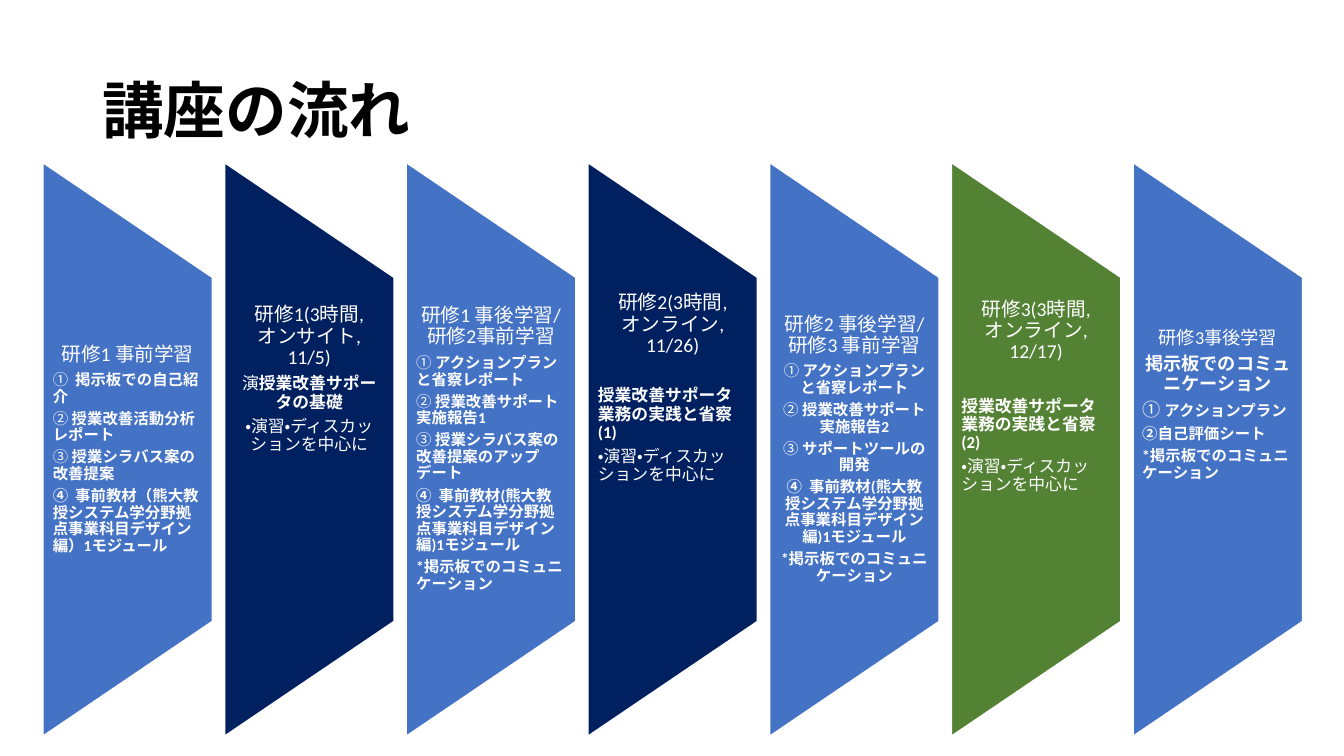
import pptx
import pptx.dml.color
import pptx.enum.lang
import pptx.enum.shapes
import pptx.enum.text
import pptx.util

Pt = pptx.util.Pt
ALIGN = pptx.enum.text.PP_ALIGN
ANCHOR = pptx.enum.text.MSO_ANCHOR
COLORS = {"blue": "4472C4", "navy": "002060", "green": "548235",
          "white": "FFFFFF", "black": "000000"}


def color(name):
    return pptx.dml.color.RGBColor.from_string(COLORS[name])


def write(frame, text, size=11, mark_size=None, align=ALIGN.LEFT, gap=None,
          font="Calibri", fill="white"):
    """Add a paragraph; text after "|" is bold, text before it is plain."""
    first = frame.paragraphs[0]
    paragraph = frame.add_paragraph() if first.runs else first
    paragraph.alignment = align
    paragraph.line_spacing = 0.9
    paragraph.space_after = Pt(round(size * 0.35, 2) if gap is None else gap)
    plain, _, bold = text.partition("|")
    for part, is_bold, part_size in ((plain, False, mark_size or size), (bold, True, size)):
        for index, line in enumerate(part.split("\n") if part else []):
            if index:
                paragraph.add_line_break()
            run = paragraph.add_run()
            run.text = line
            run.font.name = font
            run.font.size = Pt(part_size)
            run.font.bold = is_bold
            run.font.color.rgb = color(fill)
            run.font.language_id = pptx.enum.lang.MSO_LANGUAGE_ID.JAPANESE


CENTER = {"align": ALIGN.CENTER}
LEFT = {"align": ALIGN.LEFT}
BODY = {"size": 12}
CENTERED_BODY = {"size": 12, "align": ALIGN.CENTER}
HEADING = {"size": 14, "align": ALIGN.CENTER}
MATERIAL = "|④  事前教材(熊大教授システム学分野拠点事業科目デザイン編)1モジュール"
BOARD = "|*掲示板でのコミュニケーション"
PRACTICE = "・演習・ディスカッションを中心に"

# Fill, side inset, space kept free below the text, paragraphs
stages = [
    ("blue", 7.2, 0, [
        ("研修1 事前学習", HEADING),
        ("①  |掲示板での自己紹介", LEFT),
        ("② |授業改善活動分析レポート", LEFT),
        ("③ |授業シラバス案の改善提案", LEFT),
        ("|④  事前教材（熊大教授システム学分野拠点事業科目デザイン編）1モジュール", LEFT)]),
    ("navy", 7.2, 100, [
        ("研修1(3時間,\nオンサイト, 11/5)", HEADING),
        ("演|授業改善サポータの基礎", CENTERED_BODY),
        (PRACTICE, CENTERED_BODY)]),
    ("blue", 7.2, 0, [
        ("研修1 事後学習/ 研修2事前学習", HEADING),
        ("① |アクションプランと省察レポート", LEFT),
        ("② |授業改善サポート実施報告1", LEFT),
        ("③ |授業シラバス案の改善提案のアップデート", LEFT),
        (MATERIAL, LEFT),
        (BOARD, LEFT)]),
    ("navy", 7.2, 87, [
        ("研修2(3時間,\nオンライン, 11/26)", {**HEADING, "gap": 22}),
        ("|授業改善サポータ業務の実践と省察(1)", BODY),
        (PRACTICE, BODY)]),
    ("blue", 7.2, 0, [
        ("研修2 事後学習/ 研修3 事前学習", HEADING),
        ("① |アクションプランと省察レポート", CENTER),
        ("② |授業改善サポート実施報告2", CENTER),
        ("③ |サポートツールの開発", CENTER),
        (MATERIAL, CENTER),
        (BOARD, CENTER)]),
    ("green", 7.2, 75, [
        ("研修3(3時間,\nオンライン, 12/17)", {**HEADING, "gap": 25}),
        ("|授業改善サポータ業務の実践と省察(2)", BODY),
        (PRACTICE, BODY)]),
    ("blue", 6.5, 63, [
        ("研修3事後学習", {**HEADING, "size": 13}),
        ("|掲示板でのコミュニケーション", {**CENTER, "size": 13}),
        ("① |アクションプラン", {"mark_size": 13}),
        ("|②自己評価シート", LEFT),
        (BOARD, LEFT)]),
]

presentation = pptx.Presentation()
presentation.slide_width, presentation.slide_height = Pt(960), Pt(540)
slide = presentation.slides.add_slide(presentation.slide_layouts[6])

title = slide.shapes.add_textbox(Pt(66), Pt(28.75), Pt(828), Pt(104.4)).text_frame
title.word_wrap = True
title.vertical_anchor = ANCHOR.MIDDLE
write(title, "|講座の流れ", size=44, gap=0, font="Noto Sans CJK JP", fill="black")

FIRST_LEFT, PITCH, MIDDLE = 30.6, 129.8, 321
BAND_WIDTH, BAND_HEIGHT, TEXT_HEIGHT = 121, 409.6, 245.6

for number, (fill, inset, free_below, paragraphs) in enumerate(stages):
    left = FIRST_LEFT + number * PITCH
    # The band is laid out lying down, then turned upright about its centre
    band = slide.shapes.add_shape(
        pptx.enum.shapes.MSO_SHAPE.FLOWCHART_MANUAL_OPERATION,
        Pt(left + (BAND_WIDTH - BAND_HEIGHT) / 2), Pt(MIDDLE - BAND_WIDTH / 2),
        Pt(BAND_HEIGHT), Pt(BAND_WIDTH))
    band.rotation = 270
    band.shadow.inherit = False
    band.fill.solid()
    band.fill.fore_color.rgb = color(fill)
    band.line.color.rgb = color("white")
    band.line.width = Pt(1)

    content = slide.shapes.add_textbox(
        Pt(left), Pt(MIDDLE - TEXT_HEIGHT / 2), Pt(BAND_WIDTH), Pt(TEXT_HEIGHT)).text_frame
    content.word_wrap = True
    content.vertical_anchor = ANCHOR.MIDDLE
    content.margin_left = content.margin_right = Pt(inset)
    content.margin_top, content.margin_bottom = 0, Pt(free_below)
    for text, style in paragraphs:
        write(content, text, **style)

presentation.save("out.pptx")
